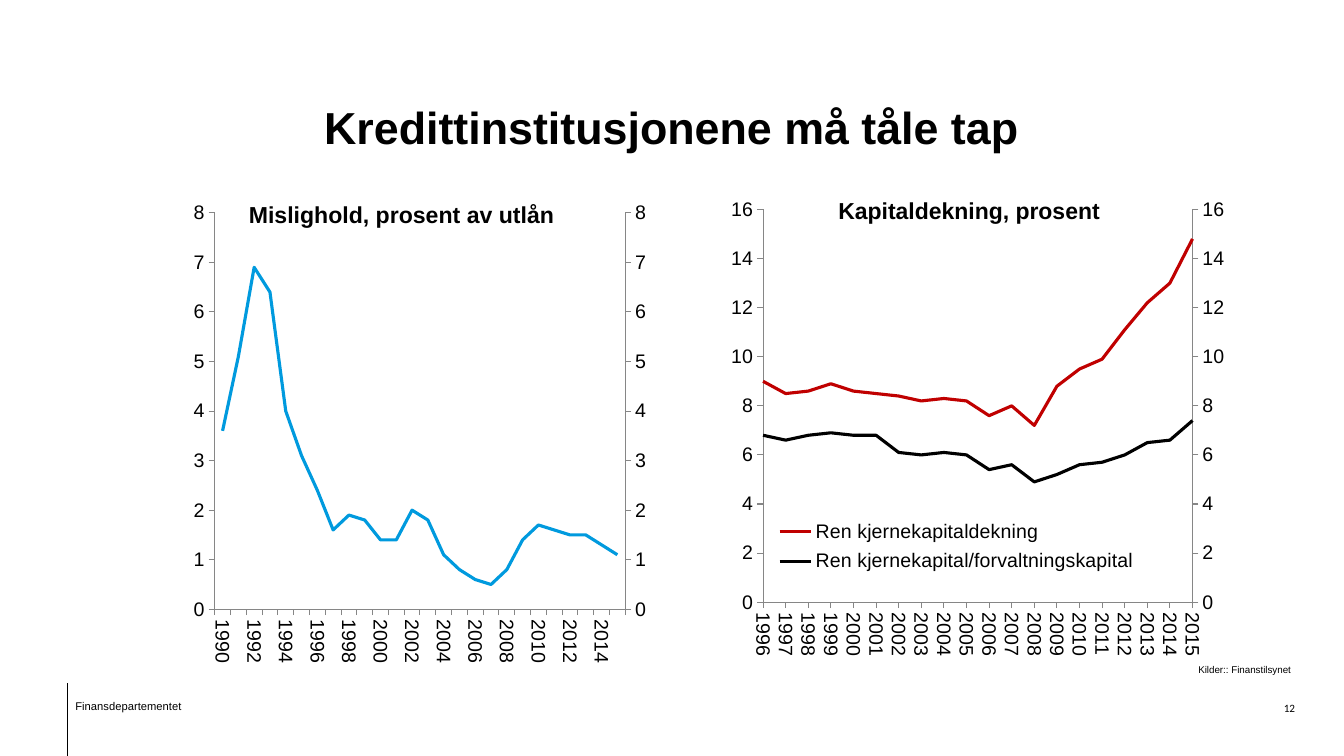
from copy import deepcopy
from pptx import Presentation, util as u
from pptx.chart import data as cd
from pptx.dml import color as dc
from pptx.enum import chart as ec, shapes as es, text as et
from pptx.oxml import parse_xml
from pptx.oxml.ns import qn

Cm, Pt = u.Cm, u.Pt
HUES = {"ink": "000000", "blue": "009ADE", "red": "C00000", "axis": "868686"}
NS = 'xmlns:c="http://schemas.openxmlformats.org/drawingml/2006/chart"'
ALIGN = et.PP_ALIGN

DEFAULT = {
    "title": "Mislighold, prosent av utlån",
    "first": 1990, "top": 8, "step": 1, "fmt": "0", "skip": 2,
    "cross": "between", "legend": None,
    "plot": (0.154, 0.075, 0.766, 0.795), "head": (0.21, 0.04),
    "rows": [
        ("Mislighold", "blue", [3.6, 5.1, 6.9, 6.4, 4, 3.1, 2.4, 1.6, 1.9, 1.8, 1.4, 1.4, 2,
                                1.8, 1.1, 0.8, 0.6, 0.5, 0.8, 1.4, 1.7, 1.6, 1.5, 1.5, 1.3, 1.1]),
        ("Høyre akse", None, [1] * 26),
    ],
}
CAPITAL = {
    "title": "Kapitaldekning, prosent",
    "first": 1996, "top": 16, "step": 2, "fmt": "#,##0", "skip": 1,
    "cross": "midCat", "legend": (0.12, 0.69, 0.72, 0.14),
    "plot": (0.101, 0.047, 0.841, 0.831), "head": (0.24, 0.01),
    "rows": [
        ("Ren kjernekapitaldekning", "red",
         [9, 8.5, 8.6, 8.9, 8.6, 8.5, 8.4, 8.2, 8.3, 8.2,
          7.6, 8, 7.2, 8.8, 9.5, 9.9, 11.1, 12.2, 13, 14.8]),
        ("Ren kjernekapital/forvaltningskapital", "ink",
         [6.8, 6.6, 6.8, 6.9, 6.8, 6.8, 6.1, 6, 6.1, 6,
          5.4, 5.6, 4.9, 5.2, 5.6, 5.7, 6, 6.5, 6.6, 7.4]),
    ],
}


def apply(item, vals):
    for key, val in vals.items():
        setattr(item, key, val)


def hue(name):
    return dc.RGBColor.from_string(HUES[name])


def style(font, size, bold=False, name="Arial"):
    apply(font, {"name": name, "size": Pt(size), "bold": bold})
    font.color.rgb = hue("ink")


def label(slide, box, words, size, form=None, align=ALIGN.LEFT, **font):
    frame = slide.shapes.add_textbox(*map(Cm, box)).text_frame
    apply(frame, {"word_wrap": True, **(form or {})})
    para = frame.paragraphs[0]
    para.alignment = align
    run = para.add_run()
    run.text = words
    style(run.font, size, **font)


def layout(node, index, spots, inner=False):
    for old in node.findall(qn("c:layout")):
        node.remove(old)
    target = '<c:layoutTarget val="inner"/>' if inner else ""
    modes = "".join(f'<c:{k}Mode val="edge"/>' for k in "xy")
    sizes = "".join(f'<c:{k} val="{v}"/>' for k, v in zip("xywh", spots))
    node.insert(index, parse_xml(
        f"<c:layout {NS}><c:manualLayout>{target}{modes}{sizes}</c:manualLayout></c:layout>"))


def put(node, tag, val):
    node.find(qn("c:" + tag)).set("val", val)


def right(area):
    line, cat, axis = (area.find(qn("c:" + t)) for t in ("lineChart", "catAx", "valAx"))
    twin, base, side = map(deepcopy, (line, cat, axis))
    line.remove(line.findall(qn("c:ser"))[1])
    twin.remove(twin.findall(qn("c:ser"))[0])
    for node, code in zip(twin.findall(qn("c:axId")), ("5001", "5002")):
        node.set("val", code)
    for node, own, other in ((base, "5001", "5002"), (side, "5002", "5001")):
        put(node, "axId", own)
        put(node, "crossAx", other)
    put(base, "delete", "1")
    put(side, "axPos", "r")
    put(side, "crosses", "max")
    line.addnext(twin)
    axis.addnext(side)
    side.addnext(base)


def axes(chart, info):
    for axis in (chart.category_axis, chart.value_axis):
        apply(axis, {"has_major_gridlines": False, "visible": True,
                     "major_tick_mark": ec.XL_TICK_MARK.OUTSIDE,
                     "minor_tick_mark": ec.XL_TICK_MARK.NONE})
        axis.format.line.color.rgb = hue("axis")
        axis.format.line.width = Pt(0.75)
        style(axis.tick_labels.font, 14)
    apply(chart.value_axis, {"minimum_scale": 0, "maximum_scale": info["top"],
                             "major_unit": info["step"]})
    apply(chart.value_axis.tick_labels,
          {"number_format": info["fmt"], "number_format_is_linked": False})
    area = chart.element.find(".//" + qn("c:plotArea"))
    cat, val = area.find(qn("c:catAx")), area.find(qn("c:valAx"))
    cat.find(".//" + qn("a:bodyPr")).set("rot", "5400000")
    skip = parse_xml(f'<c:tickLblSkip {NS} val="{info["skip"]}"/>')
    cat.find(qn("c:noMultiLvlLbl")).addprevious(skip)
    for old in val.findall(qn("c:crossBetween")):
        val.remove(old)
    cross = parse_xml(f'<c:crossBetween {NS} val="{info["cross"]}"/>')
    val.find(qn("c:crosses")).addnext(cross)
    layout(area, 0, info["plot"], True)
    right(area)


def graph(slide, box, info):
    data = cd.CategoryChartData()
    count = len(info["rows"][0][2])
    data.categories = [str(info["first"] + n) for n in range(count)]
    for name, _, vals in info["rows"]:
        data.add_series(name, vals)
    chart = slide.shapes.add_chart(ec.XL_CHART_TYPE.LINE, *map(Cm, box), data).chart
    style(chart.font, 14)
    plot = chart.plots[0]
    plot.vary_by_categories = False
    for row, (_, tint, _) in zip(plot.series, info["rows"]):
        row.smooth = False
        row.marker.style = ec.XL_MARKER_STYLE.NONE
        if tint:
            row.format.line.color.rgb = hue(tint)
            row.format.line.width = Pt(2.25)
        else:
            row.format.line.fill.background()
    chart.has_title = True
    frame = chart.chart_title.text_frame
    frame.text = info["title"]
    style(frame.paragraphs[0].runs[0].font, 16.5, True)
    head = chart.element.find(".//" + qn("c:title"))
    layout(head, 1, info["head"])
    put(head, "overlay", "1")
    chart.has_legend = bool(info["legend"])
    if chart.has_legend:
        apply(chart.legend, {"position": ec.XL_LEGEND_POSITION.TOP,
                             "include_in_layout": True})
        style(chart.legend.font, 14)
        layout(chart.legend._element, 1, info["legend"])
    axes(chart, info)


def footer(slide, box):
    left, top, wide, high = box
    rule = slide.shapes.add_connector(es.MSO_CONNECTOR.STRAIGHT,
                                      *map(Cm, (left, top, left, top + high)))
    rule.line.color.rgb = hue("ink")
    rule.line.width = Pt(0.75)
    rule._element.spPr.append(parse_xml(
        '<a:effectLst xmlns:a="http://schemas.openxmlformats.org/drawingml/2006/main"/>'))
    label(slide, (left - 0.05, top + 0.28, 7.2, 0.6), "Finansdepartementet", 8)
    label(slide, (left + wide - 1.4, top + 0.33, 1.4, 0.6), "12", 8,
          {"margin_right": 0}, ALIGN.RIGHT, name="Calibri")


def main():
    deck = Presentation()
    apply(deck, {"slide_width": Cm(33.87), "slide_height": Cm(19.05)})
    slide = deck.slides.add_slide(deck.slide_layouts[6])
    label(slide, (3.33, 0.81, 27.2, 3.18), "Kredittinstitusjonene må tåle tap", 32,
          {"vertical_anchor": et.MSO_ANCHOR.BOTTOM}, ALIGN.CENTER, bold=True)
    graph(slide, (3.33, 4.42, 13.51, 12.57), DEFAULT)
    graph(slide, (17.93, 4.72, 12.93, 11.91), CAPITAL)
    label(slide, (29.95, 16.61, 3.9, 0.56), "Kilder:: Finanstilsynet", 7)
    footer(slide, (1.7, 17.22, 30.94, 1.83))
    deck.save("out.pptx")


if __name__ == "__main__":
    main()
